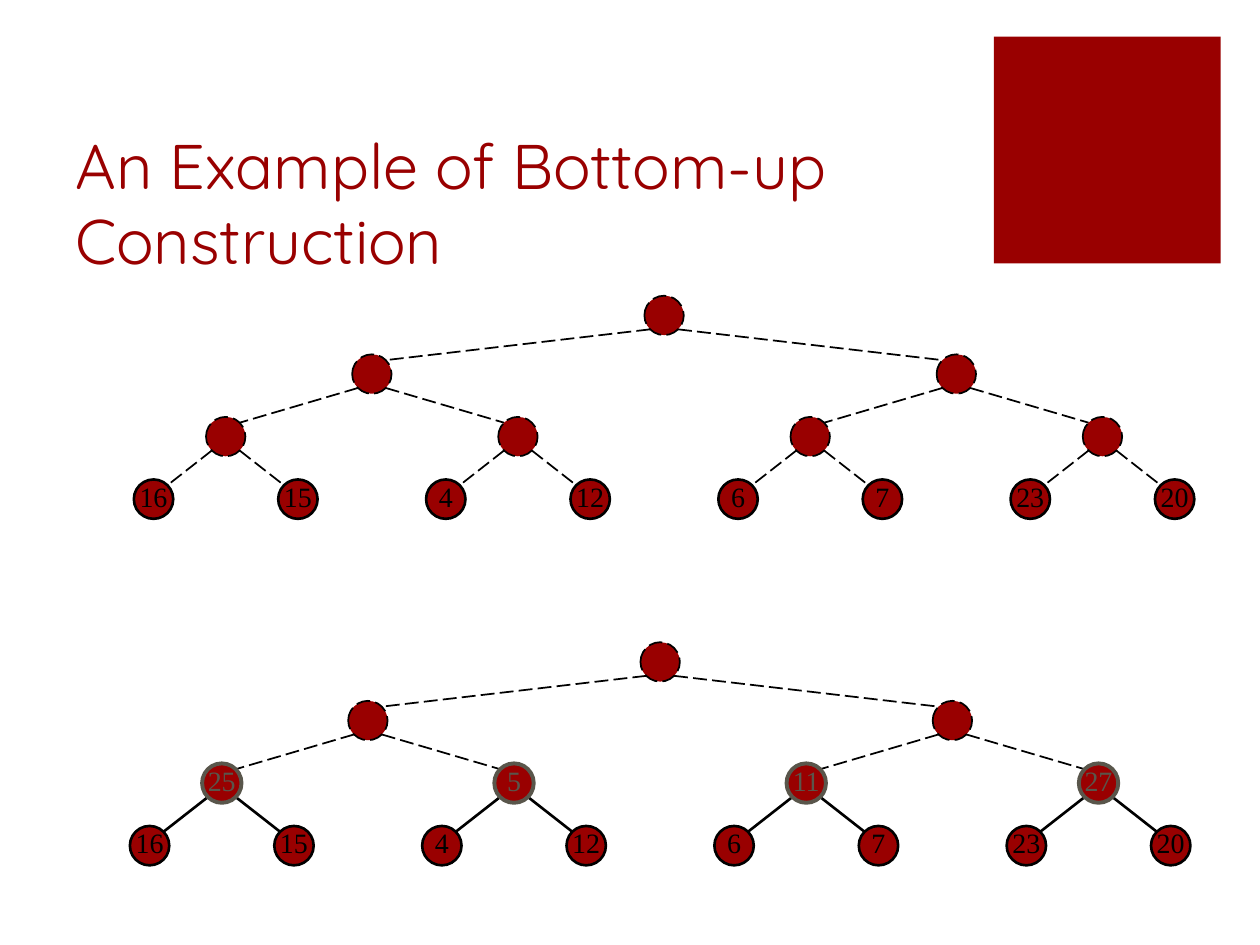
from lxml.etree import SubElement
from pptx import Presentation
from pptx.dml.color import RGBColor
from pptx.enum.dml import MSO_LINE as Dash
from pptx.enum.shapes import MSO_CONNECTOR as Conn, MSO_SHAPE as Shape
from pptx.enum.text import MSO_ANCHOR as Anchor, PP_ALIGN as Align
from pptx.oxml.ns import qn
from pptx.util import Pt

RED = RGBColor(0x99, 0x00, 0x00)
BLACK = RGBColor(0x00, 0x00, 0x00)
GRAY = RGBColor(0x59, 0x56, 0x4B)

SIZE = 22.5
INSET = 3.3
ROWS = [0, 33.5, 69.25, 105]
PAIR = 82.5
GROUP = 167
LEAVES = ["16", "15", "4", "12", "6", "7", "23", "20"]


def add_run(par, text, font, size, color):
    """Add one styled run to a paragraph."""
    run = par.add_run()
    run.text = text
    run.font.name = font
    run.font.size = Pt(size)
    run.font.color.rgb = color


def set_line(line, color, width, dashed):
    """Style an outline or an edge."""
    line.color.rgb = color
    line.width = Pt(width)
    if dashed:
        line.dash_style = Dash.LONG_DASH


def add_title(slide, left, top, width, height):
    """Place the slide title at the bottom of its box."""
    box = slide.shapes.add_textbox(Pt(left), Pt(top), Pt(width), Pt(height))
    frame = box.text_frame
    frame.word_wrap = True
    frame.vertical_anchor = Anchor.BOTTOM
    add_run(frame.paragraphs[0], "An Example of Bottom-up Construction",
            "Quicksand", 36, RED)


def add_block(slide, left, top, side):
    """Place the square accent block."""
    block = slide.shapes.add_shape(Shape.RECTANGLE, Pt(left), Pt(top),
                                   Pt(side), Pt(side))
    block.shadow.inherit = False
    block.fill.solid()
    block.fill.fore_color.rgb = RED
    block.line.fill.background()


def add_node(slide, left, top, label, color, width):
    """Place one tree node, dashed while it has no label."""
    node = slide.shapes.add_shape(Shape.OVAL, Pt(left), Pt(top),
                                  Pt(SIZE), Pt(SIZE))
    node.shadow.inherit = False
    node.fill.solid()
    node.fill.fore_color.rgb = RED
    set_line(node.line, color, width, not label)
    if label:
        frame = node.text_frame
        frame.word_wrap = False
        frame.vertical_anchor = Anchor.MIDDLE
        frame.margin_left = frame.margin_top = frame.margin_right = 0
        frame.margin_bottom = Pt(3.6)
        par = frame.paragraphs[0]
        par.alignment = Align.CENTER
        add_run(par, label, "Times New Roman", 16, color)


def add_edge(slide, start, end, solid):
    """Draw an edge between two points."""
    edge = slide.shapes.add_connector(Conn.STRAIGHT, *map(Pt, start + end))
    set_line(edge.line, BLACK, 1.5 if solid else 1, not solid)
    SubElement(edge._element.spPr, qn("a:effectLst"))


def add_tree(slide, left, top, keys):
    """Place a full binary tree, with keys on the parents of the leaves."""
    labels = [[""], [""] * 2, keys, LEAVES]
    styles = [(BLACK, 1), (BLACK, 1), (GRAY, 2.25), (BLACK, 1.5)]
    cols = [[left + GROUP * (i // 2) + PAIR * (i % 2) for i in range(8)]]
    while len(cols[0]) > 1:
        low = cols[0]
        cols.insert(0, [(a + b) / 2 for a, b in zip(low[::2], low[1::2])])
    far = SIZE - INSET
    for row in range(4):
        y = top + ROWS[row]
        for i, (x, label) in enumerate(zip(cols[row], labels[row])):
            if row < 3:
                end = top + ROWS[row + 1] + INSET
                kids = cols[row + 1][2 * i:2 * i + 2]
                for kid, out, into in zip(kids, (INSET, far), (far, INSET)):
                    add_edge(slide, (x + out, y + far), (kid + into, end),
                             bool(label))
            color, width = styles[row] if label else (BLACK, 1)
            add_node(slide, x, y, label, color, width)


def main():
    """Build the slide and save it."""
    deck = Presentation()
    deck.slide_width = Pt(720)
    deck.slide_height = Pt(540)
    slide = deck.slides.add_slide(deck.slide_layouts[6])
    add_block(slide, 568, 21, 129.5)
    add_title(slide, 36, 72, 512.5, 90)
    add_tree(slide, 76.5, 169, [""] * 4)
    add_tree(slide, 74.25, 367, ["25", "5", "11", "27"])
    deck.save("out.pptx")


if __name__ == "__main__":
    main()
